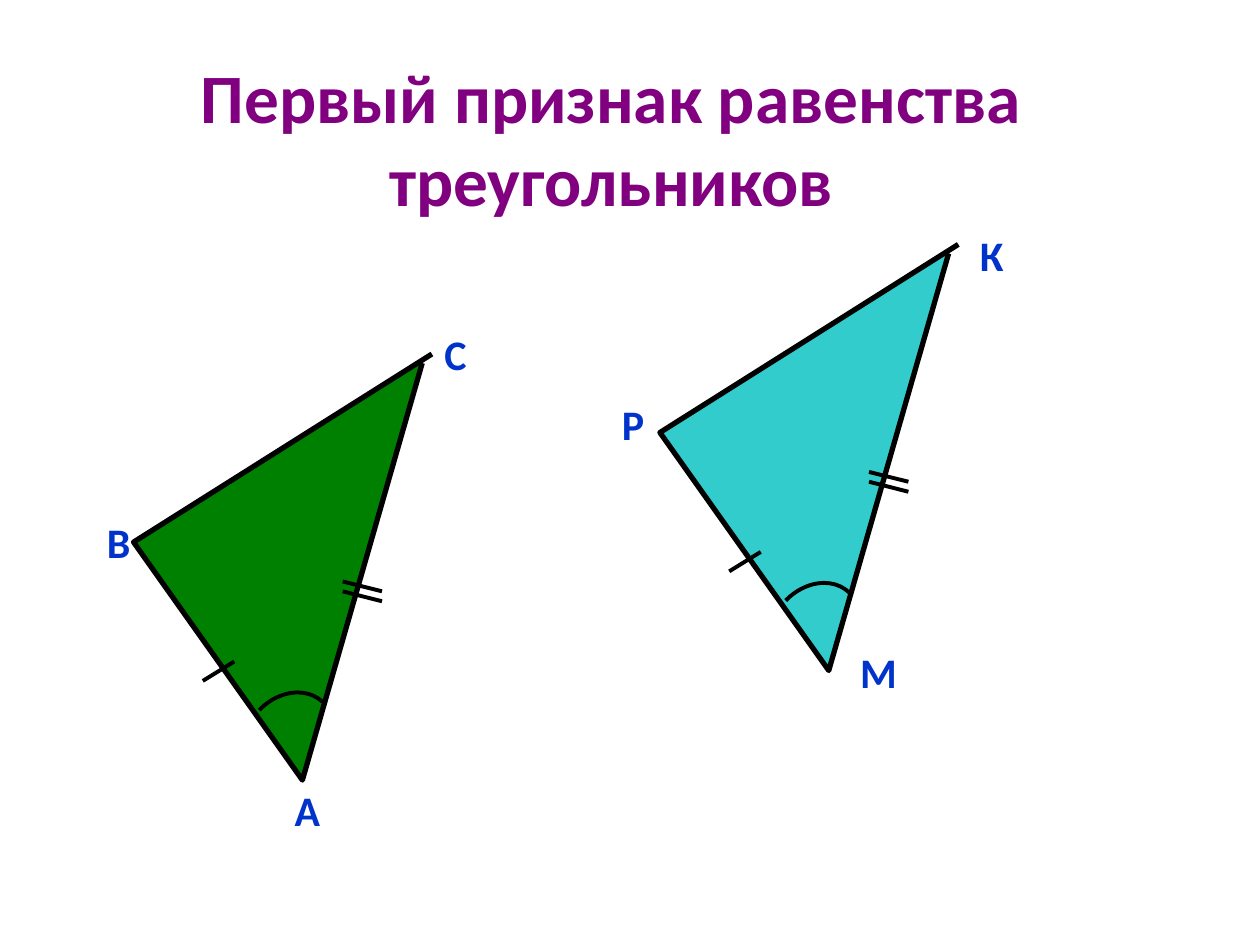
from lxml import etree
from pptx import Presentation
from pptx.dml.color import RGBColor
from pptx.enum import shapes, text
from pptx.oxml.ns import qn
from pptx.util import Pt

FONT = "Calibri"
PURPLE = RGBColor(0x80, 0x00, 0x80)
BLUE = RGBColor(0x00, 0x33, 0xCC)
GREEN = RGBColor(0x00, 0x80, 0x00)
TEAL = RGBColor(0x33, 0xCC, 0xCC)
BLACK = RGBColor(0x00, 0x00, 0x00)

# Triangle geometry in points, relative to the top left of its box
OUTLINE = [(165, 5.2), (96.5, 243.5), (0, 107.5), (170.5, 0)]
TICKS = [(57.6, 175.7, 39.6, 186.8),
         (119.5, 135.6, 142, 141.3),
         (119.5, 130, 142, 135.6)]
ARC_BOX = (65.5, 190.8, 45.4, 56.9)


def set_line(sp, width):
    sp.line.color.rgb = BLACK
    sp.line.width = Pt(width)


def set_font(p, size, color):
    p.font.name = FONT
    p.font.size = Pt(size)
    p.font.bold = True
    p.font.color.rgb = color


def add_title(slide, wording, left, top, width, height):
    title = slide.shapes.title
    title.left, title.top = Pt(left), Pt(top)
    title.width, title.height = Pt(width), Pt(height)
    tf = title.text_frame
    tf.text = wording
    tf.word_wrap = True
    tf.auto_size = text.MSO_AUTO_SIZE.NONE
    tf.vertical_anchor = text.MSO_ANCHOR.BOTTOM
    p = tf.paragraphs[0]
    p.alignment = text.PP_ALIGN.CENTER
    set_font(p, 39.6, PURPLE)


def add_tick(slide, x1, y1, x2, y2):
    tick = slide.shapes.add_connector(
        shapes.MSO_CONNECTOR.STRAIGHT, Pt(x1), Pt(y1), Pt(x2), Pt(y2))
    set_line(tick, 2.25)
    etree.SubElement(tick._element.spPr, qn("a:effectLst"))


def add_vertex_label(slide, letter, left, top, width):
    box = slide.shapes.add_textbox(Pt(left), Pt(top), Pt(width), Pt(27.4))
    tf = box.text_frame
    tf.word_wrap = True
    p = tf.paragraphs[0]
    p.text = letter
    p.line_spacing = 0.76
    set_font(p, 24, BLUE)


def add_triangle(slide, left, top, color, labels):
    """Draw a triangle with its equality marks, angle arc and vertex labels."""
    points = [(Pt(left + x), Pt(top + y)) for x, y in OUTLINE]
    builder = slide.shapes.build_freeform(*points[0])
    builder.add_line_segments(points[1:], close=False)
    triangle = builder.convert_to_shape()
    triangle.shadow.inherit = False
    triangle.fill.solid()
    triangle.fill.fore_color.rgb = color
    set_line(triangle, 3)

    for x1, y1, x2, y2 in TICKS:
        add_tick(slide, left + x1, top + y1, left + x2, top + y2)

    x, y, width, height = ARC_BOX
    arc = slide.shapes.add_shape(shapes.MSO_SHAPE.ARC, Pt(left + x), Pt(top + y),
                                 Pt(width), Pt(height))
    arc.adjustments[0] = 108  # 180 degrees, in units of 100000/60000 degree
    arc.adjustments[1] = 162  # 270 degrees
    arc.rotation = 44
    arc.shadow.inherit = False
    arc.fill.background()
    set_line(arc, 2.25)

    for letter, x, y, width in labels:
        add_vertex_label(slide, letter, left + x, top + y, width)


def main():
    prs = Presentation()
    prs.slide_width, prs.slide_height = Pt(720), Pt(540)
    slide = prs.slides.add_slide(prs.slide_layouts[5])
    add_title(slide, "Первый признак равенства треугольников",
              42.5, 26, 613.5, 103.7)
    add_triangle(slide, 76.3, 202.3, GREEN,
                 [("А", 85, 249, 31), ("В", -22.3, 95.8, 22.3),
                  ("С", 170.6, -11.5, 28)])
    add_triangle(slide, 377.1, 139.7, TEAL,
                 [("Р", -28.8, 90.7, 22.3), ("К", 175.7, -5.8, 25.2),
                  ("М", 107.3, 232.6, 42.5)])
    prs.save("out.pptx")


if __name__ == "__main__":
    main()
